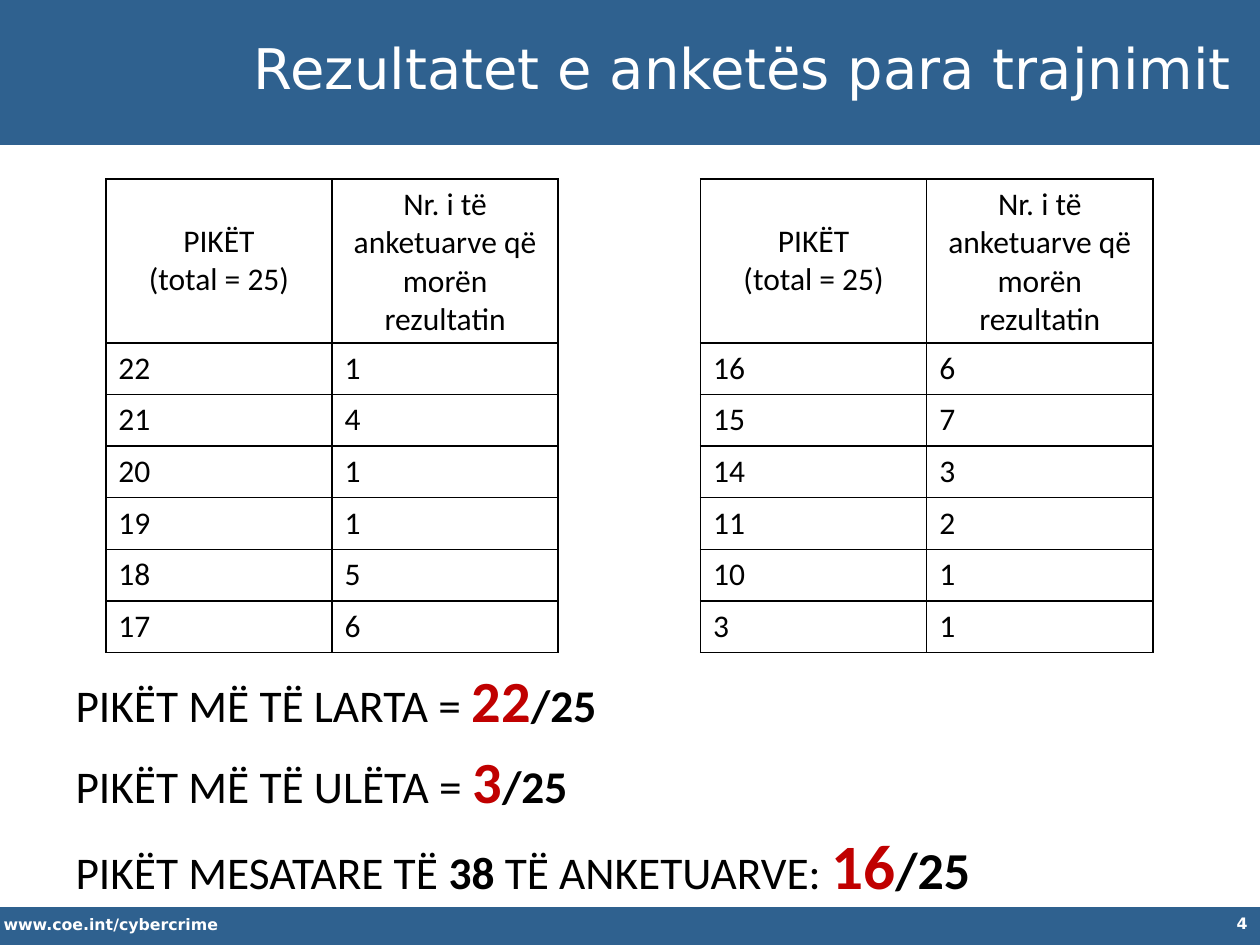
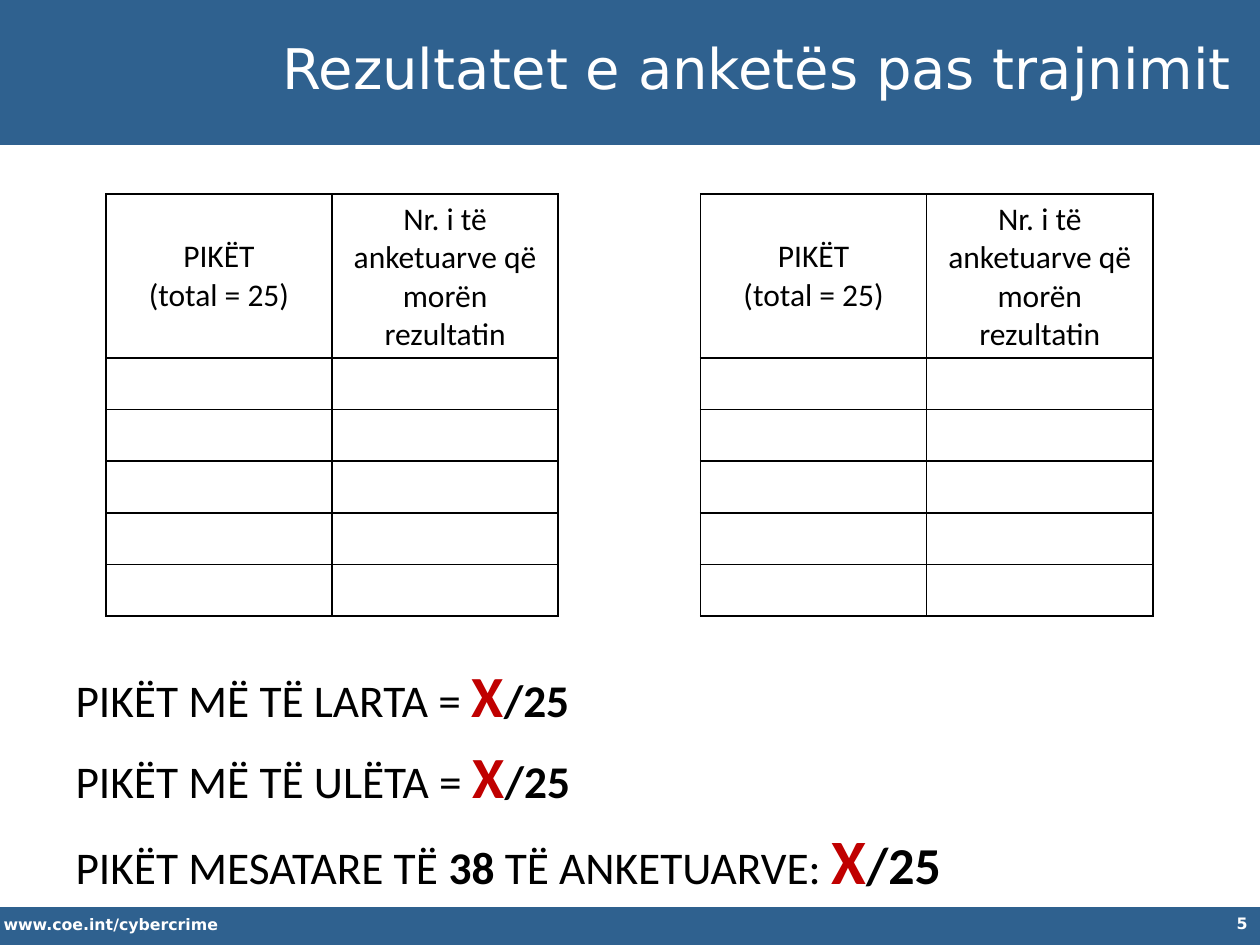
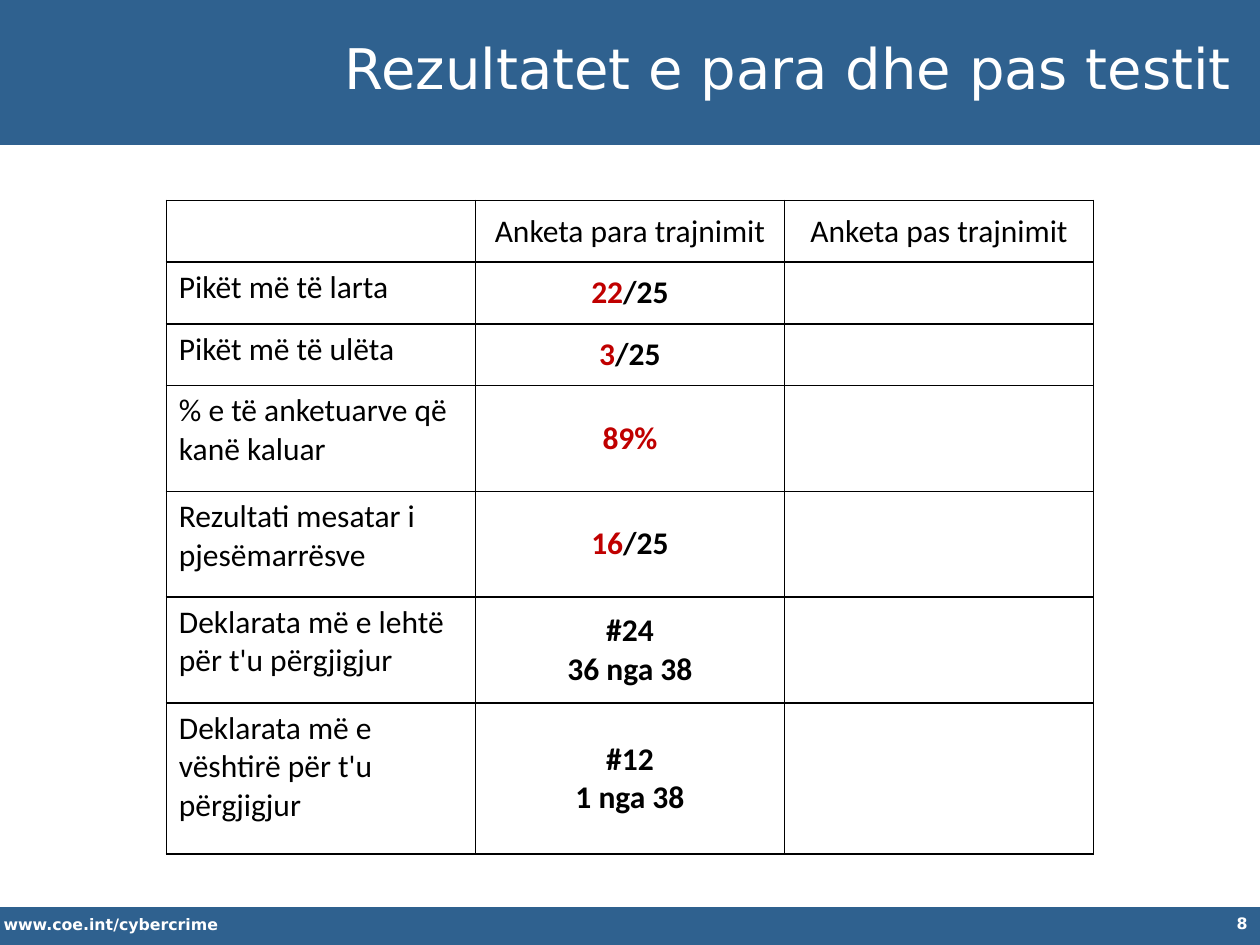
from dataclasses import dataclass

from pptx import Presentation
from pptx.dml.color import RGBColor
from pptx.enum.shapes import MSO_SHAPE
from pptx.enum.text import MSO_ANCHOR as ANCHOR, MSO_AUTO_SIZE as AUTO, PP_ALIGN as ALIGN
from pptx.oxml import parse_xml
from pptx.oxml.ns import nsdecls
from pptx.util import Inches, Pt

BLUE = RGBColor(0x2F, 0x61, 0x8F)
RED = RGBColor(0xC0, 0x00, 0x00)
BLACK = RGBColor(0x00, 0x00, 0x00)
WHITE = RGBColor(0xFF, 0xFF, 0xFF)

COLS, ROWS = 100, 75
CELL_SIZE = 18
BODY_SIZE, SCORE_SIZE = 25.9, 33.3
MEAN_SIZE, MEAN_TOTAL_SIZE = 36.1, 29.6
HANGING = Inches(0.56)


@dataclass
class Run:
    text: str
    size: float = CELL_SIZE
    bold: bool = False
    color: RGBColor = BLACK
    font: str = "Calibri"


def lines(*texts, bold=False):
    """One single-run paragraph for each text."""
    return [[Run(text, bold=bold)] for text in texts]


def score(value, size=CELL_SIZE, total_size=CELL_SIZE):
    return [Run(value, size, True, RED), Run("/25", total_size, True)]


class Deck:
    def __init__(self):
        self.prs = Presentation()
        self.prs.slide_width, self.prs.slide_height = Inches(10), Inches(7.5)
        self.s = None

    def x(self, cols):
        return round(self.prs.slide_width * cols / COLS)

    def y(self, rows):
        return round(self.prs.slide_height * rows / ROWS)

    def box(self, left, top, width, height):
        return self.x(left), self.y(top), self.x(width), self.y(height)

    def add_text(self, tf, paragraphs, align=ALIGN.LEFT):
        for i, runs in enumerate(paragraphs):
            p = tf.add_paragraph() if i else tf.paragraphs[0]
            p.alignment = align
            for run in runs:
                r = p.add_run()
                r.text = run.text
                r.font.name, r.font.size, r.font.bold = run.font, Pt(run.size), run.bold
                r.font.color.rgb = run.color

    def slide(self, layout, title, number):
        self.s = self.prs.slides.add_slide(self.prs.slide_layouts.get_by_name(layout))
        self.band(0, 11.5)
        self.band(72, 3)
        self.footer("www.coe.int/cybercrime", -0.7, 72.1, 35.2, ALIGN.LEFT)
        self.footer(str(number), 77.5, 72, 22.5, ALIGN.RIGHT)
        sp = self.fill_placeholder(self.s.shapes.title, 15.3, 2.1, 83.5, 6.4)
        self.add_text(sp.text_frame, [[Run(title, 32, False, WHITE, "DejaVu Sans")]], ALIGN.RIGHT)

    def band(self, top, height):
        """Full-width bar, kept behind the placeholders."""
        sp = self.s.shapes.add_shape(MSO_SHAPE.RECTANGLE, *self.box(0, top, COLS, height))
        sp.shadow.inherit = False
        sp.fill.solid()
        sp.fill.fore_color.rgb = BLUE
        sp.line.fill.background()
        self.s.shapes.element.insert(2, sp.element)

    def footer(self, text, left, top, width, align):
        tf = self.s.shapes.add_textbox(*self.box(left, top, width, 2.5)).text_frame
        tf.word_wrap = True
        self.add_text(tf, [[Run(text, 9, True, WHITE, "DejaVu Sans")]], align)

    def fill_placeholder(self, sp, *place):
        sp.left, sp.top, sp.width, sp.height = self.box(*place)
        sp.text_frame.auto_size = AUTO.NONE
        return sp

    def body(self, top, paragraphs):
        tf = self.fill_placeholder(self.s.placeholders[1], 5, top, 90, 19.2).text_frame
        self.add_text(tf, paragraphs)
        for i, p in enumerate(tf.paragraphs):
            pPr = p._p.get_or_add_pPr()
            pPr.set("marL", str(HANGING))
            pPr.set("indent", str(-HANGING))
            pPr.append(parse_xml(f"<a:buNone {nsdecls('a')}/>"))
            p.space_before = Pt(6.5 if i else 0)

    def table(self, left, top, width, heights, rows, centred):
        """Bordered table; centred(row, column) tells which cells are centred."""
        place = self.box(left, top, width, sum(heights))
        table = self.s.shapes.add_table(len(rows), len(rows[0]), *place).table
        table.first_row = table.horz_banding = False
        for i, (height, row) in enumerate(zip(heights, rows)):
            table.rows[i].height = self.y(height)
            for j, paragraphs in enumerate(row):
                cell = table.cell(i, j)
                cell.fill.background()
                self.border(cell)
                middle = centred(i, j)
                cell.vertical_anchor = ANCHOR.MIDDLE if middle else ANCHOR.TOP
                self.add_text(cell.text_frame, paragraphs, ALIGN.CENTER if middle else ALIGN.LEFT)

    def border(self, cell):
        tcPr = cell._tc.get_or_add_tcPr()
        for i, side in enumerate("LRTB"):
            tcPr.insert(i, parse_xml(
                f'<a:ln{side} {nsdecls("a")} w="{Pt(1)}"><a:solidFill>'
                f'<a:srgbClr val="{BLACK}"/></a:solidFill></a:ln{side}>'))

    def survey(self, title, number, table_top, halves, body_top, high, low, mean):
        """Two score tables side by side above the three summary lines."""
        self.slide("Title and Content", title, number)
        header = [lines("PIKËT", "(total = 25)"),
                  lines("Nr. i të anketuarve që morën rezultatin")]
        for left, half in zip((8.4, 55.6), halves):
            rows = [header] + [[lines(text) if text else [] for text in pair] for pair in half]
            heights = [13] + [4.1] * len(half)
            self.table(left, table_top, 35.9, heights, rows, lambda i, j: i == 0)
        self.body(body_top, [
            [Run("PIKËT MË TË LARTA = ", BODY_SIZE)] + score(high, SCORE_SIZE, BODY_SIZE),
            [Run("PIKËT MË TË ULËTA = ", BODY_SIZE)] + score(low, SCORE_SIZE, BODY_SIZE),
            [Run("PIKËT MESATARE TË ", BODY_SIZE), Run("38", BODY_SIZE, True),
             Run(" TË ANKETUARVE: ", BODY_SIZE)] + score(mean, MEAN_SIZE, MEAN_TOTAL_SIZE),
        ])


def main():
    deck = Deck()

    before = [
        [("22", "1"), ("21", "4"), ("20", "1"), ("19", "1"), ("18", "5"), ("17", "6")],
        [("16", "6"), ("15", "7"), ("14", "3"), ("11", "2"), ("10", "1"), ("3", "1")],
    ]
    deck.survey("Rezultatet e anketës para trajnimit", 4, 14.2, before, 52.2, "22", "3", "16")

    after = [[("", "")] * 5] * 2
    deck.survey("Rezultatet e anketës pas trajnimit", 5, 15.4, after, 51.8, "X", "X", "X")

    deck.slide("Title Only", "Rezultatet e para dhe pas testit", 8)
    results = [
        ("Pikët më të larta", [score("22")]),
        ("Pikët më të ulëta", [score("3")]),
        ("% e të anketuarve që kanë kaluar", [[Run("89%", bold=True, color=RED)]]),
        ("Rezultati mesatar i pjesëmarrësve", [score("16")]),
        ("Deklarata më e lehtë për t'u përgjigjur", lines("#24", "36 nga 38", bold=True)),
        ("Deklarata më e vështirë për t'u përgjigjur", lines("#12", "1 nga 38", bold=True)),
    ]
    rows = [[[], lines("Anketa para trajnimit"), lines("Anketa pas trajnimit")]]
    rows += [[lines(label), result, []] for label, result in results]
    heights = [4.9] * 3 + [8.4] * 3 + [12]
    deck.table(13.2, 15.9, 73.6, heights, rows, lambda i, j: j > 0)

    deck.prs.save("out.pptx")


if __name__ == "__main__":
    main()
